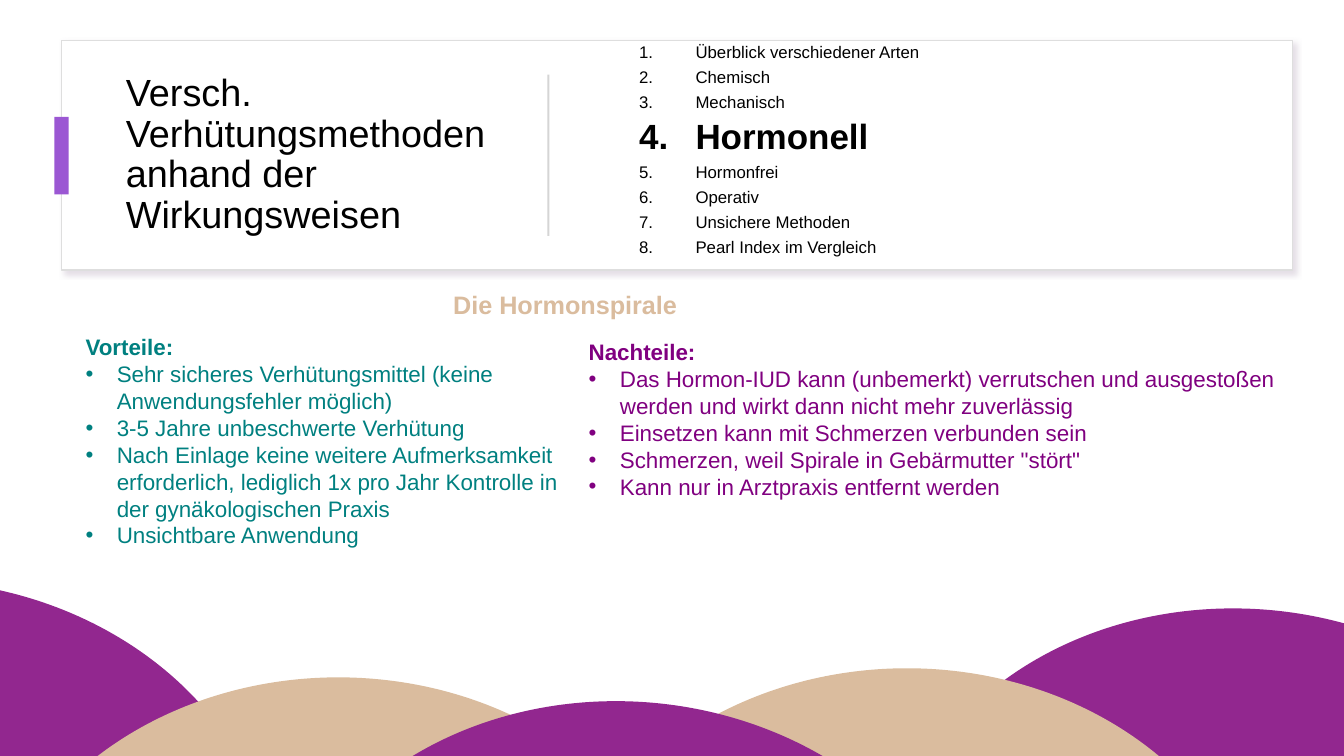
import pptx
import pptx.dml.color
import pptx.enum.shapes
import pptx.enum.text
import pptx.oxml
import pptx.oxml.ns
import pptx.util
from lxml import etree

PX = 9144  # EMU, 100 px to the inch
FONT = "Arial"
COLORS = {
    "white": "FFFFFF", "black": "000000", "frame": "DEDEDE", "divider": "D5D5D5",
    "shadow": "CABECD", "accent": "9B57D3", "plum": "92278F", "sand": "DABC9E",
    "teal": "008080", "purple": "800080",
}
SHAPES = pptx.enum.shapes.MSO_SHAPE
ALIGN = pptx.enum.text.PP_ALIGN
ANCHOR = pptx.enum.text.MSO_ANCHOR
AUTO_SIZE = pptx.enum.text.MSO_AUTO_SIZE

TOPICS = [
    "Überblick verschiedener Arten", "Chemisch", "Mechanisch", "Hormonell",
    "Hormonfrei", "Operativ", "Unsichere Methoden", "Pearl Index im Vergleich",
]
CURRENT_TOPIC = "Hormonell"
ADVANTAGES = [
    "Sehr sicheres Verhütungsmittel (keine Anwendungsfehler möglich)",
    "3-5 Jahre unbeschwerte Verhütung",
    "Nach Einlage keine weitere Aufmerksamkeit erforderlich, lediglich 1x pro Jahr "
    "Kontrolle in der gynäkologischen Praxis",
    "Unsichtbare Anwendung",
]
DRAWBACKS = [
    "Das Hormon-IUD kann (unbemerkt) verrutschen und ausgestoßen werden und wirkt "
    "dann nicht mehr zuverlässig",
    "Einsetzen kann mit Schmerzen verbunden sein",
    "Schmerzen, weil Spirale in Gebärmutter \"stört\"",
    "Kann nur in Arztpraxis entfernt werden",
]
HILL_SIZE = (713, 607)
HILLS = [  # left, top, colour, rotation
    (-438, 576, "plum", 4.8), (-21, 672, "sand", 0), (876, 604, "plum", 4.8),
    (543, 663, "sand", 0), (264, 696, "plum", 4.8),
]


def rgb(name):
    return pptx.dml.color.RGBColor.from_string(COLORS[name])


class Page:
    def __init__(self, deck):
        self.shapes = deck.slides.add_slide(deck.slide_layouts[6]).shapes

    def shape(self, kind, bounds, fill, line=None, rotation=0):
        shape = self.shapes.add_shape(kind, *(length * PX for length in bounds))
        shape.shadow.inherit = False
        shape.fill.solid()
        shape.fill.fore_color.rgb = rgb(fill)
        shape.rotation = rotation
        if line:
            shape.line.color.rgb = rgb(line)
            shape.line.width = pptx.util.Pt(1)
        else:
            shape.line.fill.background()
        return shape

    def drop_shadow(self, shape):
        effects = shape._element.spPr.find(pptx.oxml.ns.qn("a:effectLst"))
        effects.append(pptx.oxml.parse_xml(
            f'<a:outerShdw {pptx.oxml.ns.nsdecls("a")} blurRad="50800" dist="38100" '
            f'dir="2700000" algn="tl" rotWithShape="0"><a:srgbClr val="{COLORS["shadow"]}">'
            '<a:alpha val="50000"/></a:srgbClr></a:outerShdw>'))

    def text(self, bounds, lines, size, color, bold=False, middle=False):
        box = self.shapes.add_textbox(*(length * PX for length in bounds))
        frame = box.text_frame
        frame.word_wrap = True
        frame.auto_size = AUTO_SIZE.NONE if middle else AUTO_SIZE.SHAPE_TO_FIT_TEXT
        frame.vertical_anchor = ANCHOR.MIDDLE if middle else ANCHOR.TOP
        frame.text = "\n".join(lines)
        for para in frame.paragraphs:
            if middle:
                para.line_spacing = 0.9
            for span in para.runs:
                self.style(span, size, color, bold)
        return frame.paragraphs

    def style(self, span, size, color, bold):
        span.font.name = FONT
        span.font.size = pptx.util.Pt(size)
        span.font.bold = bold
        span.font.color.rgb = rgb(color)

    def mark(self, para, margin, hanging, tag, **attributes):
        """Give a paragraph a hanging bullet or number."""
        properties = para._p.get_or_add_pPr()
        properties.set("marL", str(margin * PX))
        properties.set("indent", str(-hanging * PX))
        font = etree.SubElement(properties, pptx.oxml.ns.qn("a:buFont"))
        font.set("typeface", FONT)
        etree.SubElement(properties, pptx.oxml.ns.qn(tag), attributes)

    def agenda(self, bounds, topics, current):
        paragraphs = self.text(bounds, topics, 12, "black", middle=True)
        for index, para in enumerate(paragraphs):
            if index:
                para.space_before = pptx.util.Pt(5)
            self.mark(para, 106, 56, "a:buAutoNum", type="arabicPeriod")
            if para.text == current:
                self.style(para.runs[0], 25, "black", True)

    def bullet_list(self, bounds, heading, points, color):
        first, *others = self.text(bounds, [heading, *points], 16, color)
        first.runs[0].font.bold = True
        for para in others:
            self.mark(para, 31, 31, "a:buChar", char="•")


def main():
    deck = pptx.Presentation()
    deck.slide_width, deck.slide_height = 1333 * PX, 750 * PX
    page = Page(deck)

    header = page.shape(SHAPES.RECTANGLE, (61, 40, 1221, 228), "white", "frame")
    page.drop_shadow(header)
    page.text((115, 64, 400, 180), ["Versch. Verhütungsmethoden anhand der Wirkungsweisen"],
              27, "black", middle=True)
    page.shape(SHAPES.RECTANGLE, (54, 116, 14, 77), "accent")
    page.shape(SHAPES.RECTANGLE, (543, 74, 2, 160), "divider")
    page.agenda((574, 40, 668, 219), TOPICS, CURRENT_TOPIC)

    subtitle = page.text((-50, 282, 1221, 40), ["Die Hormonspirale"], 18, "sand", bold=True)
    subtitle[0].alignment = ALIGN.CENTER

    for left, top, color, rotation in HILLS:
        page.shape(SHAPES.OVAL, (left, top, *HILL_SIZE), color, rotation=rotation)

    page.bullet_list((75, 326, 491, 286), "Vorteile:", ADVANTAGES, "teal")
    page.bullet_list((574, 331, 731, 229), "Nachteile:", DRAWBACKS, "purple")
    deck.save("out.pptx")


if __name__ == "__main__":
    main()
